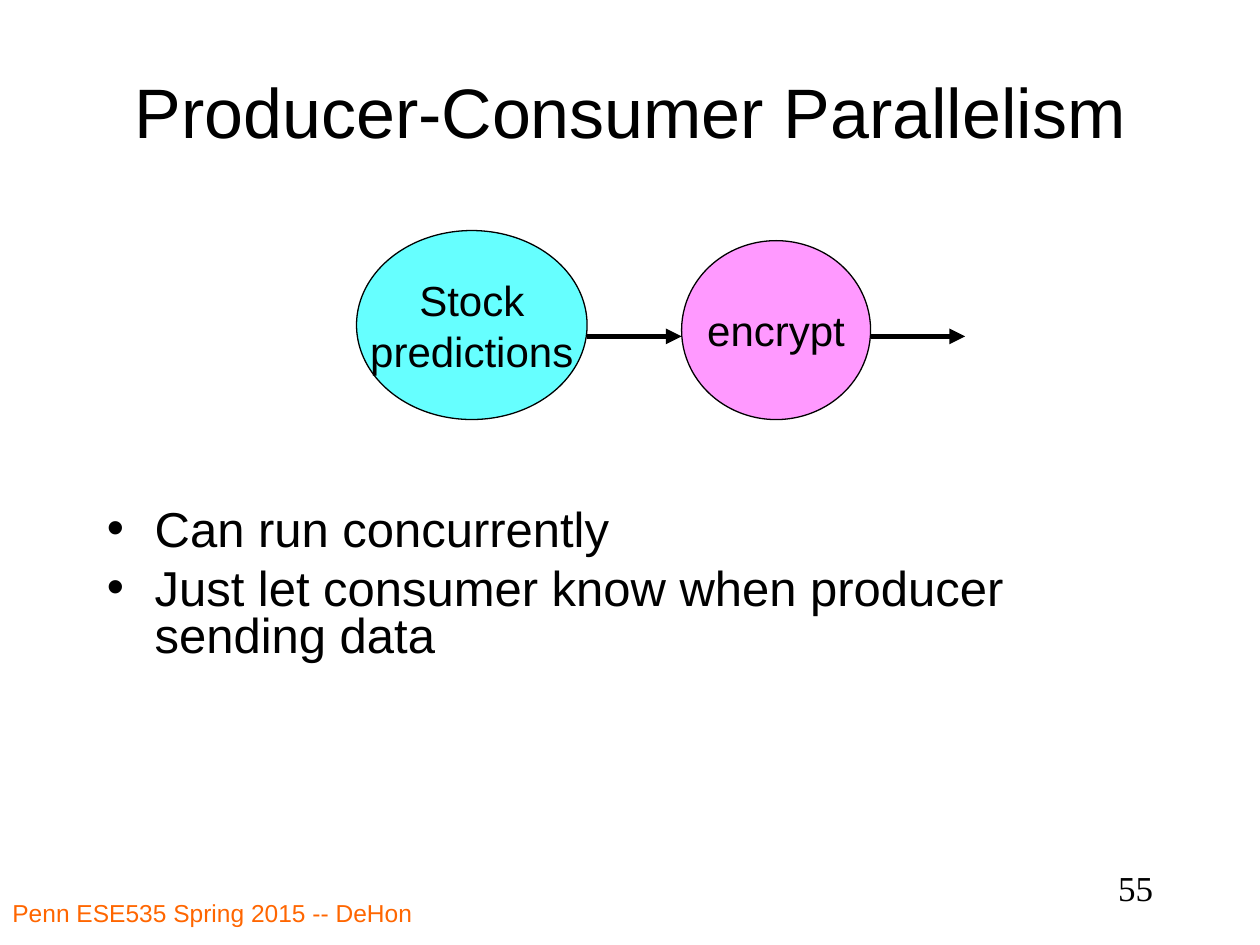
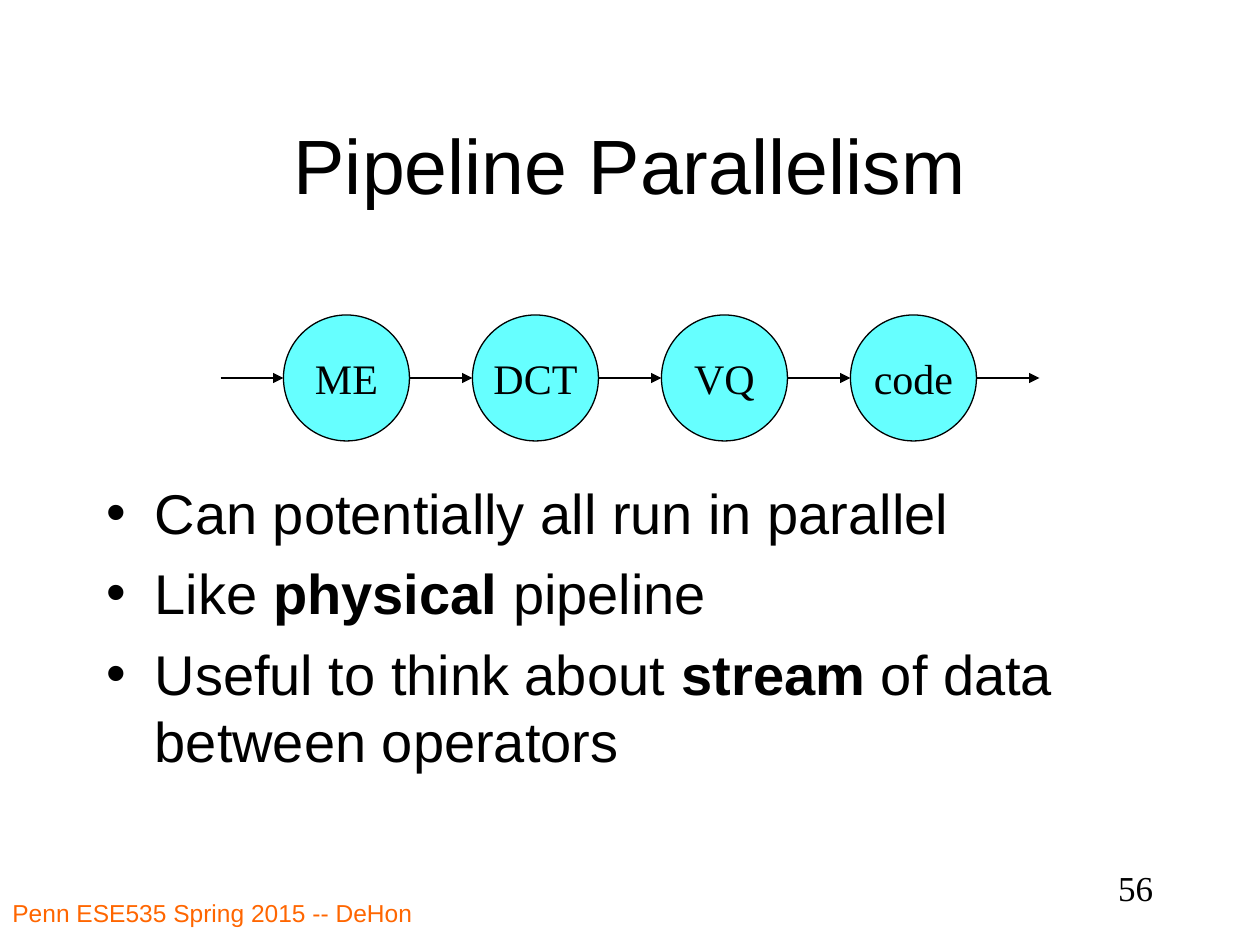
from dataclasses import dataclass

from lxml import etree
from pptx import Presentation
from pptx.dml.color import RGBColor
from pptx.enum.shapes import MSO_CONNECTOR, MSO_SHAPE
from pptx.enum.text import MSO_ANCHOR, PP_ALIGN
from pptx.oxml.ns import qn
from pptx.util import Inches, Pt

LEFT, CENTER, RIGHT = PP_ALIGN.LEFT, PP_ALIGN.CENTER, PP_ALIGN.RIGHT
TOP, MIDDLE = MSO_ANCHOR.TOP, MSO_ANCHOR.MIDDLE
ELLIPSE, STRAIGHT = MSO_SHAPE.OVAL, MSO_CONNECTOR.STRAIGHT


@dataclass(frozen=True)
class Theme:
    """Colours, fonts and type sizes of the deck."""
    ink: str = "000000"
    footer: str = "FF6600"
    cyan: str = "66FFFF"
    pink: str = "FF99FF"
    sans: str = "Arial"
    serif: str = "Times New Roman"
    footer_size: int = 14
    number_size: int = 20
    node_size: int = 24
    outline: float = 0.75


THEME = Theme()


def write_text(tf, lines, size, font=THEME.sans, color=THEME.ink, align=LEFT,
               anchor=TOP, wrap=True, bullet=False, spacing=None):
    """Fill a text frame with one paragraph per line; *asterisks* mark bold."""
    tf.word_wrap = wrap
    tf.vertical_anchor = anchor
    for i, line in enumerate(lines):
        p = tf.add_paragraph() if i else tf.paragraphs[0]
        p.alignment = align
        if bullet:
            add_bullet(p)
            p.space_before = Pt(round(size * 0.23, 1) if i else 0)
        if spacing:
            p.line_spacing = spacing
        for j, part in enumerate(line.split("*")):
            r = p.add_run()
            r.text = part
            r.font.name = font
            r.font.size = Pt(size)
            r.font.bold = j % 2 == 1
            r.font.color.rgb = RGBColor.from_string(color)


def add_bullet(p):
    """Give a paragraph a hanging round bullet."""
    pPr = p._p.get_or_add_pPr()
    indent = Inches(0.38)
    pPr.set("marL", str(indent))
    pPr.set("indent", str(-indent))
    etree.SubElement(pPr, qn("a:buFont")).set("typeface", THEME.sans)
    etree.SubElement(pPr, qn("a:buChar")).set("char", "•")


def add_text(s, box, lines, size, **fmt):
    """Add a text box at left, top, width, height in inches."""
    sp = s.shapes.add_textbox(*map(Inches, box))
    write_text(sp.text_frame, lines, size, **fmt)


def add_node(shapes, box, lines, fill, font):
    """Add a labelled ellipse."""
    sp = shapes.add_shape(ELLIPSE, *map(Inches, box))
    sp.shadow.inherit = False
    sp.fill.solid()
    sp.fill.fore_color.rgb = RGBColor.from_string(fill)
    sp.line.color.rgb = RGBColor.from_string(THEME.ink)
    sp.line.width = Pt(THEME.outline)
    write_text(sp.text_frame, lines, THEME.node_size, font=font,
               align=CENTER, anchor=MIDDLE, wrap=False)


def add_arrow(shapes, x, y, length, width):
    """Add a horizontal arrow pointing right."""
    line = shapes.add_connector(STRAIGHT, Inches(x), Inches(y),
                                Inches(x + length), Inches(y))
    line.line.color.rgb = RGBColor.from_string(THEME.ink)
    line.line.width = Pt(width)
    ln = line.line._get_or_add_ln()
    etree.SubElement(ln, qn("a:tailEnd")).set("type", "triangle")
    etree.SubElement(line._element.spPr, qn("a:effectLst"))


def add_frame(prs, number, title, title_top, title_size):
    """Add a blank slide with its title, course footer and slide number."""
    s = prs.slides.add_slide(prs.slide_layouts[6])
    add_text(s, (0, 7.08, 4.58, 0.42), ["Penn ESE535 Spring 2015 -- DeHon"],
             THEME.footer_size, color=THEME.footer)
    add_text(s, (7.17, 6.83, 2.08, 0.5), [str(number)],
             THEME.number_size, font=THEME.serif, align=RIGHT)
    add_text(s, (0.75, title_top, 8.5, 1.25), [title], title_size,
             align=CENTER, anchor=MIDDLE)
    return s


def draw_producer_consumer(s, left, top):
    """Draw the producer feeding the consumer, as one group."""
    shapes = s.shapes.add_group_shape().shapes
    gap, arrow_y = 0.75, top + 0.84
    producer_w, consumer_w = 1.83, 1.5
    consumer_x = left + producer_w + gap
    add_node(shapes, (left, top, producer_w, 1.5),
             ["Stock", "predictions"], THEME.cyan, THEME.sans)
    add_node(shapes, (consumer_x, top + 0.08, consumer_w, 1.42),
             ["encrypt"], THEME.pink, THEME.sans)
    for x in (left + producer_w, consumer_x + consumer_w):
        add_arrow(shapes, x, arrow_y, gap, 3)


def draw_pipeline(s, left, top, stages):
    """Draw equal stages with an arrow before each and one after the last."""
    diameter, gap = 1, 0.5
    pitch = diameter + gap
    for i, stage in enumerate(stages):
        add_node(s.shapes, (left + gap + i * pitch, top, diameter, diameter),
                 [stage], THEME.cyan, THEME.serif)
    for i in range(len(stages) + 1):
        add_arrow(s.shapes, left + i * pitch, top + diameter / 2, gap,
                  THEME.outline)


def producer_consumer_slide(prs, number):
    """Build the producer-consumer slide."""
    s = add_frame(prs, number, "Producer-Consumer Parallelism", 0.25, 40)
    add_text(s, (0.75, 4, 8.5, 2.67),
             ["Can run concurrently",
              "Just let consumer know when producer sending data"],
             28, bullet=True, spacing=0.8)
    draw_producer_consumer(s, 2.83, 1.83)


def pipeline_slide(prs, number):
    """Build the pipeline slide."""
    s = add_frame(prs, number, "Pipeline Parallelism", 0.67, 44)
    add_text(s, (0.75, 3.75, 8.5, 2.92),
             ["Can potentially all run in parallel",
              "Like *physical* pipeline",
              "Useful to think about *stream* of data between operators"],
             32, bullet=True)
    draw_pipeline(s, 1.75, 2.5, ["ME", "DCT", "VQ", "code"])


def main():
    """Build and save the deck."""
    prs = Presentation()
    prs.slide_width, prs.slide_height = Inches(10), Inches(7.5)
    builders = (producer_consumer_slide, pipeline_slide)
    for number, build in enumerate(builders, start=55):
        build(prs, number)
    prs.save("out.pptx")


if __name__ == "__main__":
    main()
